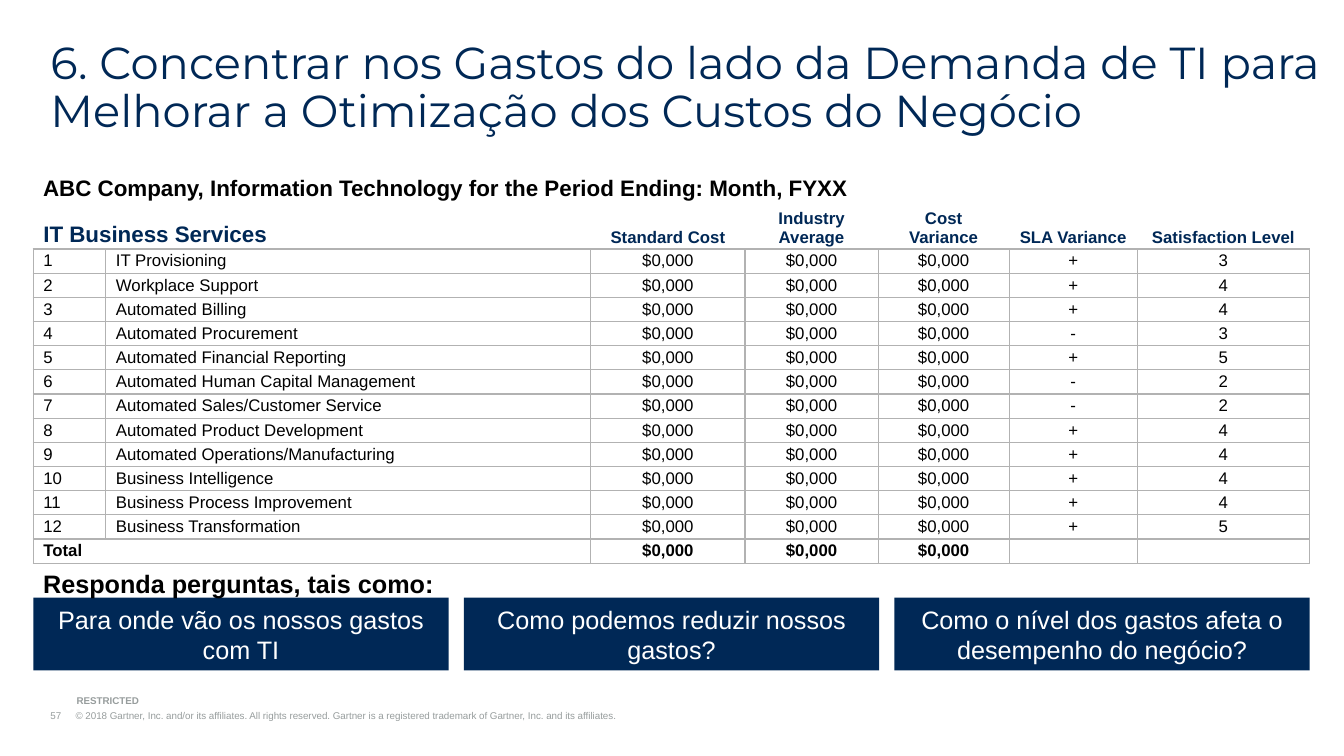
from lxml.etree import SubElement
from pptx import Presentation
from pptx.dml.color import RGBColor
from pptx.enum.shapes import MSO_SHAPE
from pptx.enum.text import MSO_ANCHOR, MSO_AUTO_SIZE, PP_ALIGN
from pptx.oxml.ns import qn
from pptx.util import Inches, Pt

NAVY = RGBColor(0x00, 0x28, 0x56)
BLACK = RGBColor(0x00, 0x00, 0x00)
WHITE = RGBColor(0xFF, 0xFF, 0xFF)
FOOTER_GRAY = RGBColor(0x97, 0x9D, 0x9D)
GRID_GRAY = RGBColor(0xB2, 0xB2, 0xB2)

TITLE = ("6. Concentrar nos Gastos do lado da Demanda de TI para "
         "Melhorar a Otimização dos Custos do Negócio")
COPYRIGHT = ("57\t© 2018 Gartner, Inc. and/or its affiliates. All rights reserved.\u00a0"
             "Gartner is a registered trademark of Gartner, Inc. and its affiliates.")
HEADINGS = ["IT Business Services", "", "Standard Cost", "Industry Average",
            "Cost Variance", "SLA Variance", "Satisfaction Level"]
SERVICES = [
    ("IT Provisioning", "+", "3"),
    ("Workplace Support", "+", "4"),
    ("Automated Billing", "+", "4"),
    ("Automated Procurement", "-", "3"),
    ("Automated Financial Reporting", "+", "5"),
    ("Automated Human Capital Management", "-", "2"),
    ("Automated Sales/Customer Service", "-", "2"),
    ("Automated Product Development", "+", "4"),
    ("Automated Operations/Manufacturing", "+", "4"),
    ("Business Intelligence", "+", "4"),
    ("Business Process Improvement", "+", "4"),
    ("Business Transformation", "+", "5"),
]
COSTS = ["$0,000"] * 3
QUESTIONS = ["Para onde vão os nossos gastos com TI",
             "Como podemos reduzir nossos gastos?",
             "Como o nível dos gastos afeta o desempenho do negócio?"]
COLUMN_WIDTHS = [0.72, 4.81, 1.53, 1.32, 1.3, 1.27, 1.71]
HEADER_HEIGHT, ROW_HEIGHT = 0.44, 0.24
LEFT = 0.33


def write(frame, text, size, color=BLACK, bold=False, font="Arial",
          align=PP_ALIGN.LEFT, anchor=MSO_ANCHOR.TOP, inset=None):
    frame.word_wrap = True
    frame.vertical_anchor = anchor
    if inset is not None:
        frame.margin_left = frame.margin_right = Inches(inset)
        frame.margin_top = frame.margin_bottom = Inches(inset)
    para = frame.paragraphs[0]
    para.alignment = align
    span = para.add_run()
    span.text = text
    span.font.size = Pt(size)
    span.font.name = font
    span.font.bold = bold
    span.font.color.rgb = color
    return para


def set_borders(cell, sides):
    """Draw the sides named by letter (L, R, T, B) and clear the others."""
    properties = cell._tc.get_or_add_tcPr()
    for side in "LRTB":
        line = SubElement(properties, qn(f"a:ln{side}"), w=str(Pt(1)))
        if side in sides:
            fill = SubElement(line, qn("a:solidFill"))
            SubElement(fill, qn("a:srgbClr"), val=str(GRID_GRAY))
        else:
            SubElement(line, qn("a:noFill"))


def add_hanging_tab(para, distance):
    properties = para._p.get_or_add_pPr()
    properties.set("marL", str(Inches(distance)))
    properties.set("indent", str(-Inches(distance)))
    tabs = SubElement(properties, qn("a:tabLst"))
    SubElement(tabs, qn("a:tab"), pos=str(Inches(distance)), algn="l")


class ServicesSlide:
    def __init__(self, deck):
        self.page = deck.slides.add_slide(deck.slide_layouts[5])

    def title(self, text):
        box = self.page.shapes.title
        box.left, box.top = Inches(0.5), Inches(0.4)
        box.width, box.height = Inches(12.83), Inches(0.48)
        para = write(box.text_frame, text, 32, NAVY, font="Montserrat", inset=0)
        box.text_frame.auto_size = MSO_AUTO_SIZE.NONE
        para.line_spacing = 0.9
        para.space_after = Pt(12)

    def text(self, text, left, top, width, height, size, **style):
        box = self.page.shapes.add_textbox(
            Inches(left), Inches(top), Inches(width), Inches(height))
        return write(box.text_frame, text, size, **style)

    def question(self, text, left, top, width, height):
        box = self.page.shapes.add_shape(
            MSO_SHAPE.RECTANGLE, Inches(left), Inches(top), Inches(width), Inches(height))
        box.shadow.inherit = False
        box.fill.solid()
        box.fill.fore_color.rgb = NAVY
        box.line.fill.background()
        write(box.text_frame, text, 18, WHITE,
              align=PP_ALIGN.CENTER, anchor=MSO_ANCHOR.MIDDLE)

    def cell(self, cell, text, row, column, last_row):
        header = row == 0
        set_borders(cell, "B" if header else "LRTB")
        cell.fill.background()
        cell.margin_left = cell.margin_right = Inches(0.1)
        cell.margin_top = cell.margin_bottom = Inches(0.02)
        cell.vertical_anchor = MSO_ANCHOR.BOTTOM if header else MSO_ANCHOR.MIDDLE
        if not text:
            SubElement(cell.text_frame.paragraphs[0]._p, qn("a:endParaRPr"), sz="1200")
            return
        write(cell.text_frame, text, 16 if header and column == 0 else 12,
              NAVY if header else BLACK, bold=row in (0, last_row),
              align=PP_ALIGN.LEFT if column < 2 else PP_ALIGN.CENTER,
              anchor=cell.vertical_anchor)

    def table(self, rows, left, top):
        height = HEADER_HEIGHT + ROW_HEIGHT * (len(rows) - 1)
        table = self.page.shapes.add_table(
            len(rows), len(COLUMN_WIDTHS), Inches(left), Inches(top),
            Inches(sum(COLUMN_WIDTHS)), Inches(height)).table
        table.first_row = table.horz_banding = False
        for column, width in zip(table.columns, COLUMN_WIDTHS):
            column.width = Inches(width)
        last_row = len(rows) - 1
        for row, values in enumerate(rows):
            table.rows[row].height = Inches(ROW_HEIGHT if row else HEADER_HEIGHT)
            for column, value in enumerate(values):
                self.cell(table.cell(row, column), value, row, column, last_row)
        for row in (0, last_row):
            table.cell(row, 0).merge(table.cell(row, 1))


def main():
    deck = Presentation()
    deck.slide_width, deck.slide_height = Inches(13.33), Inches(7.5)
    slide = ServicesSlide(deck)

    footer = {"size": 7, "color": FOOTER_GRAY, "anchor": MSO_ANCHOR.BOTTOM, "inset": 0}
    add_hanging_tab(slide.text(COPYRIGHT, 0.5, 7.04, 7.99, 0.12, **footer), 0.25)
    slide.text("RESTRICTED", 0.76, 6.89, 2.53, 0.12, bold=True, **footer)

    slide.title(TITLE)
    slide.text("ABC Company, Information Technology for the Period Ending: Month, FYXX",
               LEFT, 1.68, 8.73, 0.37, 16, bold=True)

    width, gap = 4.12, 0.15
    for index, question in enumerate(QUESTIONS):
        slide.question(question, LEFT + index * (width + gap), 5.93, width, 0.72)

    services = [[str(number), name, *COSTS, variance, level]
                for number, (name, variance, level) in enumerate(SERVICES, 1)]
    slide.table([HEADINGS, *services, ["Total", "", *COSTS, "", ""]], LEFT, 2.03)
    slide.text("Responda perguntas, tais como:", LEFT, 5.59, 6.67, 0.4, 18, bold=True)

    deck.save("out.pptx")


if __name__ == "__main__":
    main()
